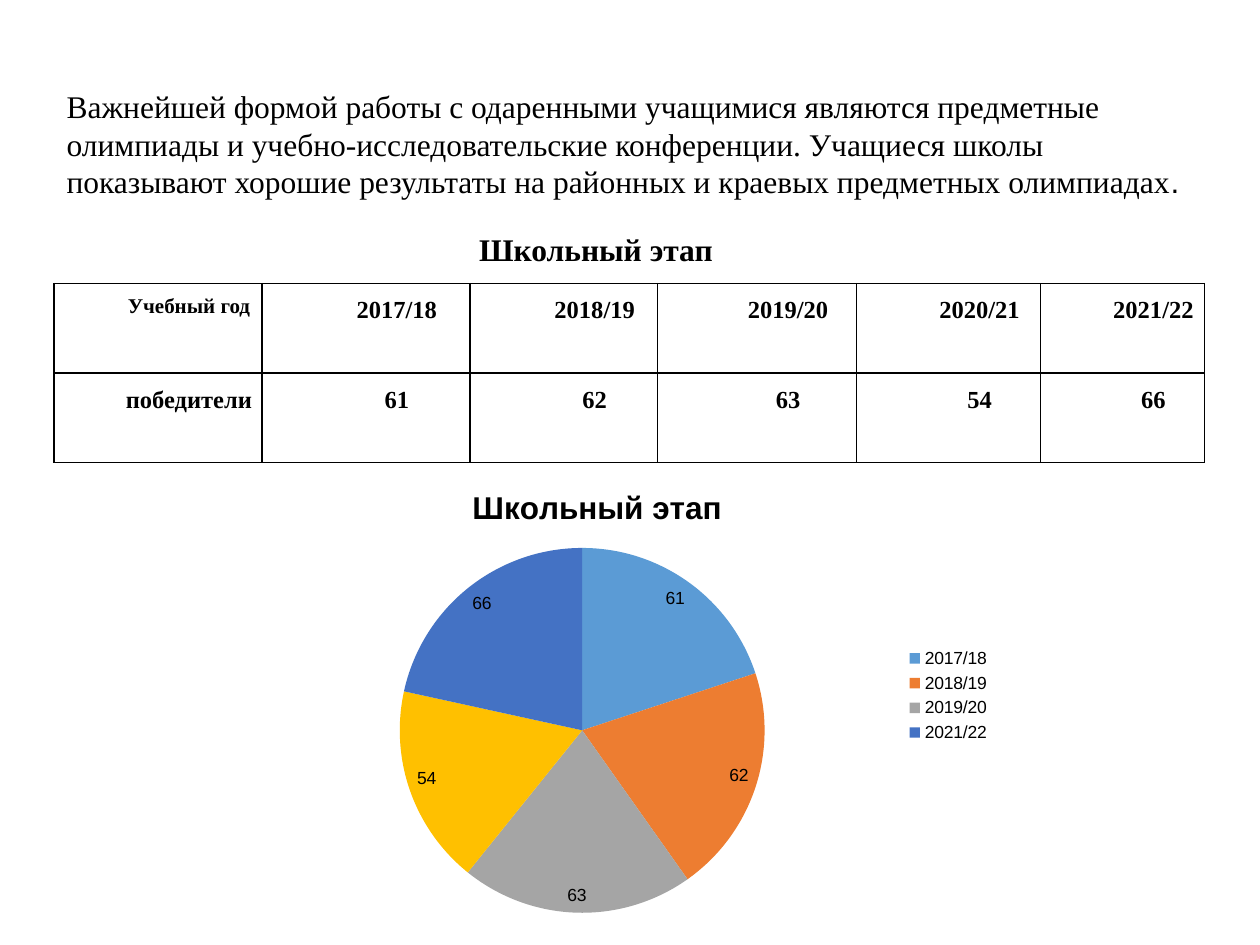
from lxml import etree
from pptx import Presentation, util as u
from pptx.chart.data import CategoryChartData
from pptx.dml.color import RGBColor
from pptx.enum import chart as ch, text
from pptx.oxml import parse_xml
from pptx.oxml.ns import nsdecls, qn

COLORS = {
    "ink": "000000",
    "2017/18": "5B9BD5",
    "2018/19": "ED7D31",
    "2019/20": "A5A5A5",
    "2020/2021": "FFC000",
    "2021/22": "4472C4",
}
SERIF, SANS = "Times New Roman", "Arial"
HEADING = "Школьный этап"
WINNERS = [61, 62, 63, 54, 66]
YEARS = ["2017/18", "2018/19", "2019/20", "2020/21", "2021/22"]


class Deck:
    columns, rows = 100, 75

    def __init__(self, prs):
        self.prs = prs
        self.s = prs.slides.add_slide(prs.slide_layouts[6])

    def x(self, n):
        return round(self.prs.slide_width * n / self.columns)

    def y(self, n):
        return round(self.prs.slide_height * n / self.rows)

    def box(self, at):
        left, top, width, height = at
        return self.x(left), self.y(top), self.x(width), self.y(height)

    def style(self, font, name, size, bold=False):
        font.name, font.size, font.bold = name, u.Pt(size), bold
        font.color.rgb = RGBColor.from_string(COLORS["ink"])

    def text(self, at, runs, bold=False, align=text.PP_ALIGN.LEFT):
        tf = self.s.shapes.add_textbox(*self.box(at)).text_frame
        tf.word_wrap = True
        tf.auto_size = text.MSO_AUTO_SIZE.SHAPE_TO_FIT_TEXT
        p = tf.paragraphs[0]
        p.alignment = align
        for words, name in runs:
            r = p.add_run()
            r.text = words
            self.style(r.font, name, 18, bold)

    def cell(self, cell, words, size):
        cell.fill.background()
        cell.margin_left = cell.margin_right = u.Inches(0.07)
        cell.margin_top = cell.margin_bottom = 0
        p = cell.text_frame.paragraphs[0]
        p.text = words
        p.alignment = text.PP_ALIGN.CENTER
        p.line_spacing = 1.5
        pPr = p._p.get_or_add_pPr()
        pPr.set("marL", str(u.Inches(0.49)))
        pPr.set("indent", "0")
        self.style(p.runs[0].font, SERIF, size, True)
        tcPr = cell._tc.get_or_add_tcPr()
        for i, side in enumerate(("lnL", "lnR", "lnT", "lnB")):
            tcPr.insert(i, parse_xml(
                f'<a:{side} {nsdecls("a")} w="{u.Pt(1)}"><a:solidFill>'
                f'<a:srgbClr val="{COLORS["ink"]}"/></a:solidFill></a:{side}>'))

    def table(self, at, widths, data):
        table = self.s.shapes.add_table(len(data), len(widths), *self.box(at)).table
        table.first_row = table.horz_banding = False
        for column, width in zip(table.columns, widths):
            column.width = self.x(width)
        for i, row in enumerate(data):
            for j, words in enumerate(row):
                self.cell(table.cell(i, j), words, 14 if i or j else 12)

    def layout(self, parent, before, **shares):
        for old in parent.findall(qn("c:layout")):
            parent.remove(old)
        layout = etree.Element(qn("c:layout"))
        manual = etree.SubElement(layout, qn("c:manualLayout"))
        for tag, value in shares.items():
            etree.SubElement(manual, qn("c:" + tag)).set("val", str(value))
        parent.insert(before, layout)

    def pie(self, at, title, cats, vals, hidden):
        data = CategoryChartData()
        data.categories = cats
        data.add_series("Series 1", vals)
        chart = self.s.shapes.add_chart(
            ch.XL_CHART_TYPE.PIE, *self.box(at), data).chart
        self.style(chart.font, SANS, 10)
        chart.has_title = True
        p = chart.chart_title.text_frame.paragraphs[0]
        p.text = title
        self.style(p.font, SANS, 18, True)
        self.layout(chart.chart_title._element, 1,
                    xMode="edge", yMode="edge", x=0.28, y=0.04)
        plot = chart.plots[0]
        plot.vary_by_categories = True
        for i, cat in enumerate(cats):
            fill = plot.series[0].points[i].format.fill
            fill.solid()
            fill.fore_color.rgb = RGBColor.from_string(COLORS[cat])
        plot.has_data_labels = True
        labels = plot.data_labels
        labels.show_value = True
        labels.show_percentage = False
        labels.position = ch.XL_LABEL_POSITION.INSIDE_END
        self.style(labels.font, SANS, 10)
        self.layout(chart._chartSpace.chart.plotArea, 0, layoutTarget="inner",
                    xMode="edge", yMode="edge", x=0.19, y=0.18, w=0.49, h=0.79)
        chart.has_legend = True
        legend = chart.legend
        legend.position = ch.XL_LEGEND_POSITION.RIGHT
        legend.include_in_layout = False
        self.style(legend.font, SANS, 10)
        legend._element.insert(1, parse_xml(
            f'<c:legendEntry {nsdecls("c")}><c:idx val="{hidden}"/>'
            '<c:delete val="1"/></c:legendEntry>'))


def main():
    prs = Presentation()
    prs.slide_width, prs.slide_height = u.Inches(10), u.Inches(7.5)
    deck = Deck(prs)
    deck.table((4.3, 22.5, 91.3, 14.2), (16.5, 16.5, 14.9, 15.8, 14.6, 13),
               [["Учебный год", *YEARS], ["победители", *map(str, WINNERS)]])
    deck.text((14.6, 17.8, 65.4, 4), [(HEADING, SERIF)], True,
              text.PP_ALIGN.CENTER)
    deck.pie((20.5, 36.7, 59.1, 37), HEADING, list(COLORS)[1:], WINNERS, 3)
    deck.text((4.3, 6.4, 92.1, 10.1), [
        ("Важнейшей формой работы с одаренными учащимися являются предметные "
         "олимпиады и учебно-исследовательские конференции. Учащиеся школы "
         "показывают хорошие результаты на районных и краевых предметных "
         "олимпиадах", SERIF),
        (".", SANS)])
    prs.save("out.pptx")


if __name__ == "__main__":
    main()
